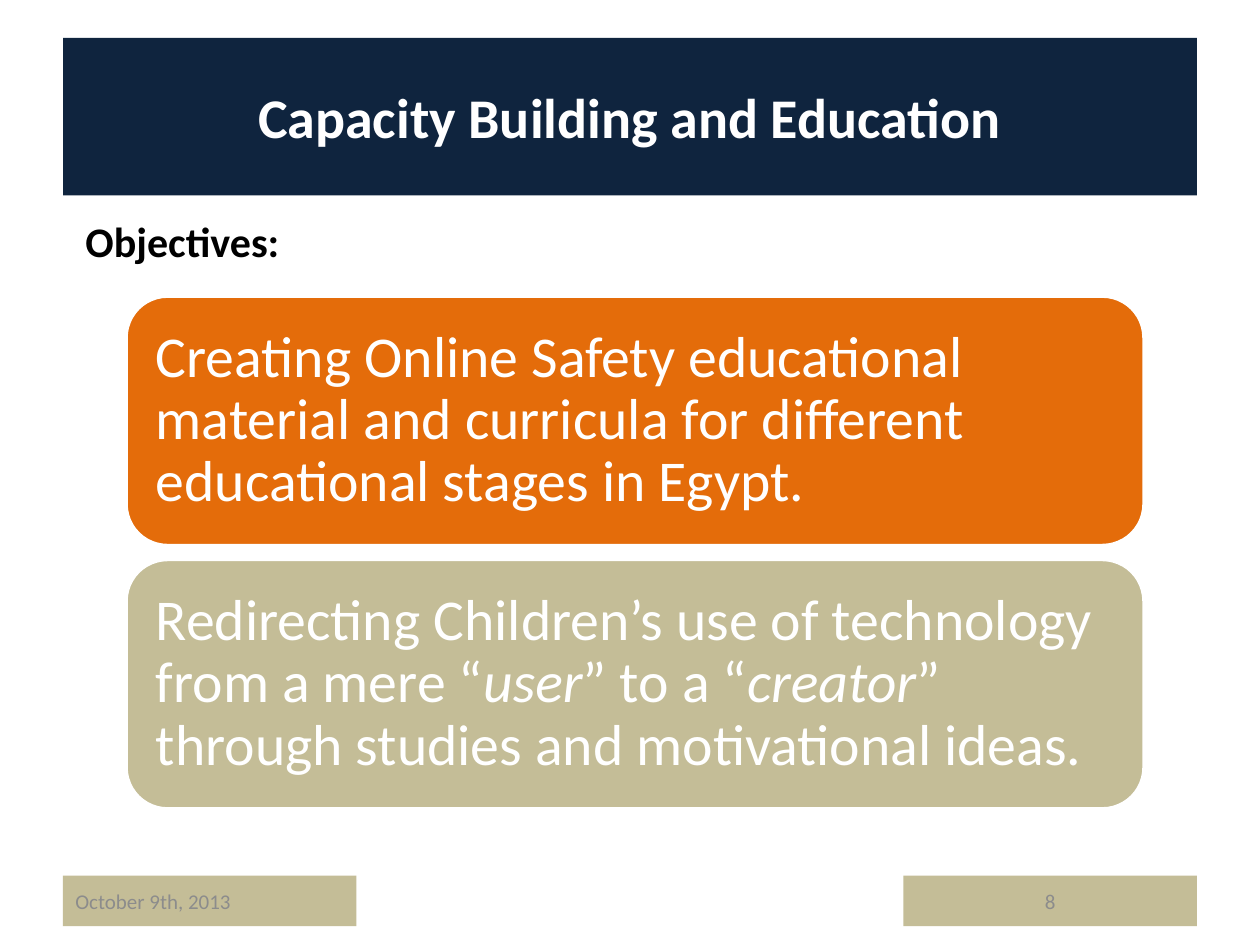
from pptx import Presentation
from pptx.dml.color import RGBColor
from pptx.enum.shapes import MSO_SHAPE
from pptx.enum.text import MSO_ANCHOR, PP_ALIGN
from pptx.util import Inches, Pt

FONT = "Calibri"
NAVY, ORANGE, TAN = "0F243E", "E46C0A", "C4BD97"
WHITE, BLACK, GREY = "FFFFFF", "000000", "8C8C8C"

TITLE = "Capacity Building and Education"
HEADING = "Objectives:"
# Each objective: fill colour and its (text, italic) runs
OBJECTIVES = [
    (ORANGE, [("Creating Online Safety educational material and curricula "
               "for different educational stages in Egypt.", False)]),
    (TAN, [("Redirecting Children’s use of technology from a mere “", False),
           ("user", True), ("” to a “", False), ("creator", True),
           ("” through studies and motivational ideas.", False)]),
]
# Each footer block: left edge, text, alignment
FOOTERS = [
    (0.5, "October 9th, 2013", PP_ALIGN.LEFT),
    (7.17, "8", PP_ALIGN.CENTER),
]
CARD_LEFT, CARD_TOP, CARD_W, CARD_H, CARD_STEP = 1, 2.35, 8.08, 1.98, 2.09


def rgb(value):
    return RGBColor.from_string(value)


def fill(shape, color):
    shape.fill.solid()
    shape.fill.fore_color.rgb = rgb(color)


def write(shape, runs, size, color, bold=False, align=PP_ALIGN.LEFT):
    """Fill the shape's first paragraph with (text, italic) runs and return it."""
    tf = shape.text_frame
    tf.vertical_anchor = MSO_ANCHOR.MIDDLE
    p = tf.paragraphs[0]
    p.alignment = align
    for text, italic in runs:
        r = p.add_run()
        r.text = text
        if italic:
            r.font.italic = True
    p.font.name, p.font.size, p.font.bold = FONT, Pt(size), bold
    p.font.color.rgb = rgb(color)
    return p


def add_block(s, kind, left, top, width, height, color):
    sp = s.shapes.add_shape(kind, Inches(left), Inches(top),
                            Inches(width), Inches(height))
    sp.shadow.inherit = False
    fill(sp, color)
    sp.line.fill.background()
    return sp


def add_card(s, index, color, runs):
    sp = add_block(s, MSO_SHAPE.ROUNDED_RECTANGLE, CARD_LEFT,
                   CARD_TOP + index * CARD_STEP, CARD_W, CARD_H, color)
    sp.line.color.rgb = rgb(WHITE)
    sp.line.width = Pt(2)
    tf = sp.text_frame
    tf.word_wrap = True
    tf.margin_left = tf.margin_right = Inches(0.14)
    tf.margin_top = tf.margin_bottom = Inches(0.14)
    write(sp, runs, 33, WHITE).line_spacing = 0.9


def main():
    prs = Presentation()
    prs.slide_width, prs.slide_height = Inches(10), Inches(7.5)
    s = prs.slides.add_slide(prs.slide_layouts[5])

    title = s.shapes.title
    title.left, title.top = Inches(0.5), Inches(0.3)
    title.width, title.height = Inches(9), Inches(1.25)
    fill(title, NAVY)
    write(title, [(TITLE, False)], 32, WHITE, True, PP_ALIGN.CENTER)

    for left, text, align in FOOTERS:
        sp = add_block(s, MSO_SHAPE.RECTANGLE, left, 6.95, 2.33, 0.4, TAN)
        write(sp, [(text, False)], 12, GREY, align=align)

    for i, (color, runs) in enumerate(OBJECTIVES):
        add_card(s, i, color, runs)

    heading = s.shapes.add_textbox(Inches(0.58), Inches(1.66),
                                   Inches(1.75), Inches(0.5))
    heading.text_frame.word_wrap = True
    write(heading, [(HEADING, False)], 24, BLACK, True)

    prs.save("out.pptx")


if __name__ == "__main__":
    main()
